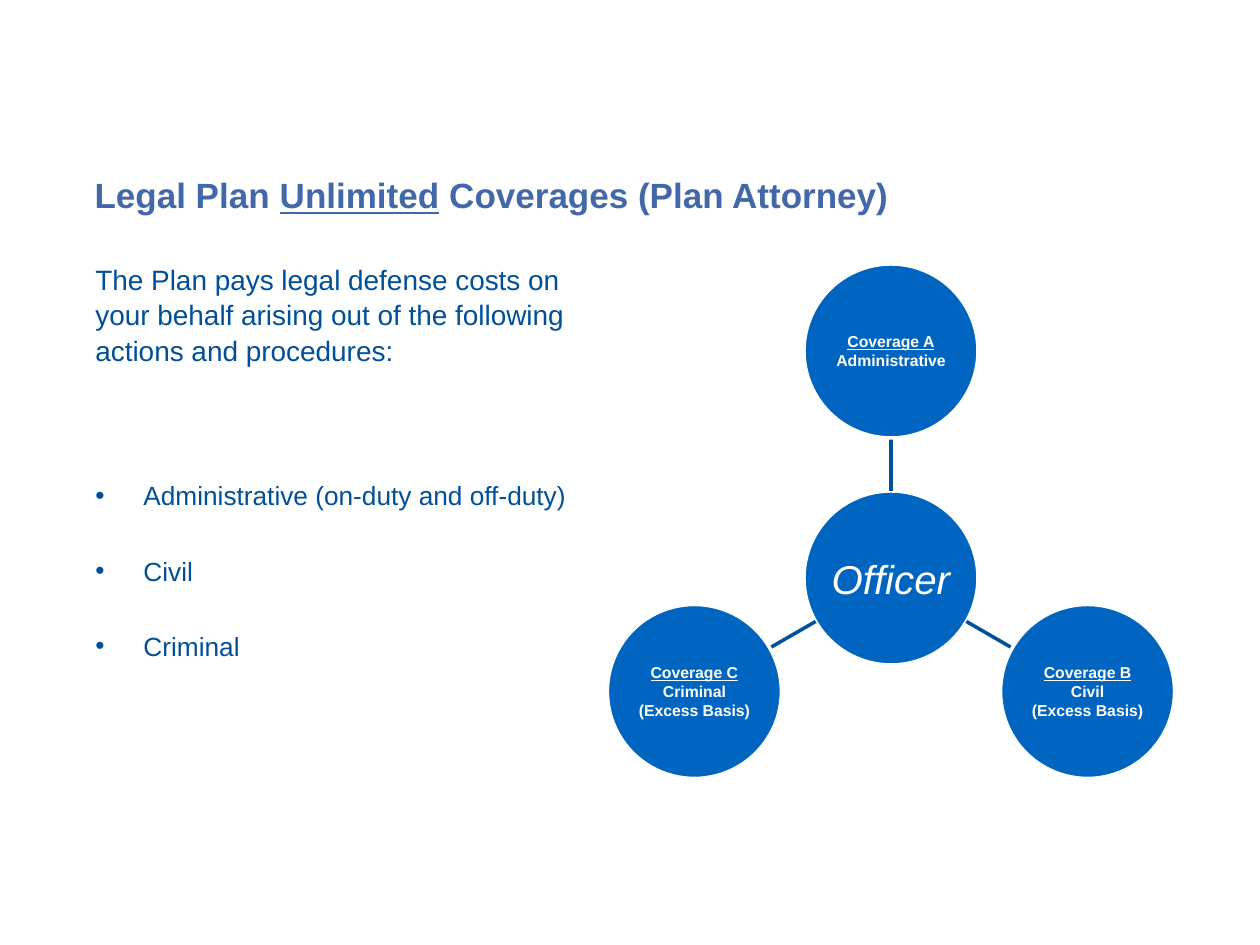
from dataclasses import dataclass
from math import cos, radians, sin

from lxml.etree import SubElement
from pptx import Presentation
from pptx.dml.color import RGBColor
from pptx.enum.shapes import MSO_CONNECTOR, MSO_SHAPE
from pptx.enum.text import MSO_ANCHOR, PP_ALIGN
from pptx.oxml.ns import qn
from pptx.util import Emu, Pt

PX_PER_INCH = 126


@dataclass(frozen=True)
class Theme:
    font: str = "Arial"
    title: RGBColor = RGBColor(0x43, 0x68, 0xAA)
    body: RGBColor = RGBColor(0x00, 0x4F, 0x99)
    circle: RGBColor = RGBColor(0x00, 0x65, 0xC0)
    spoke: RGBColor = RGBColor(0x00, 0x51, 0x9A)
    white: RGBColor = RGBColor(0xFF, 0xFF, 0xFF)
    title_size: int = 20
    intro_size: int = 16
    bullet_size: int = 15
    hub_size: int = 23
    coverage_size: int = 9
    line_width: int = 2
    line_spacing: float = 1.05


@dataclass(frozen=True)
class Coverage:
    angle: int  # degrees clockwise from the right
    lines: tuple[str, ...]


THEME = Theme()
HUB_X, HUB_Y = 891, 578
RADIUS, ORBIT = 87, 227
BULLET_INDENT = 48

BULLETS = ("Administrative (on-duty and off-duty)", "Civil", "Criminal")
COVERAGES = (
    Coverage(-90, ("Coverage A", "Administrative")),
    Coverage(30, ("Coverage B", "Civil", "(Excess Basis)")),
    Coverage(150, ("Coverage C", "Criminal", "(Excess Basis)")),
)


def px(n: float) -> Emu:
    return Emu(round(n * 914400 / PX_PER_INCH))


def format_runs(p, size: int, color: RGBColor, bold=False, italic=False) -> None:
    for r in p.runs:
        r.font.name = THEME.font
        r.font.size = Pt(size)
        r.font.color.rgb = color
        r.font.bold = bold
        r.font.italic = italic


def fill_lines(tf, lines: tuple[str, ...]) -> list:
    tf.text = "\n".join(lines)
    return list(tf.paragraphs)


def add_bullet(p) -> None:
    pPr = p._p.get_or_add_pPr()
    pPr.set("marL", str(px(BULLET_INDENT)))
    pPr.set("indent", str(-px(BULLET_INDENT)))
    SubElement(pPr, qn("a:buFont"), typeface=THEME.font)
    SubElement(pPr, qn("a:buChar"), char="•")


def add_text(s, left: int, top: int, width: int, height: int, anchor):
    tf = s.shapes.add_textbox(px(left), px(top), px(width), px(height)).text_frame
    tf.word_wrap = True
    tf.vertical_anchor = anchor
    return tf


def add_circle(s, x: float, y: float, lines: tuple[str, ...], size: int,
               bold=False, italic=False):
    sp = s.shapes.add_shape(MSO_SHAPE.OVAL, px(x - RADIUS), px(y - RADIUS),
                            px(2 * RADIUS), px(2 * RADIUS))
    sp.shadow.inherit = False
    sp.fill.solid()
    sp.fill.fore_color.rgb = THEME.circle
    sp.line.color.rgb = THEME.white
    sp.line.width = Pt(THEME.line_width)
    tf = sp.text_frame
    tf.word_wrap = False
    tf.vertical_anchor = MSO_ANCHOR.MIDDLE
    tf.margin_left = tf.margin_right = tf.margin_top = tf.margin_bottom = px(1)
    for p in fill_lines(tf, lines):
        p.alignment = PP_ALIGN.CENTER
        format_runs(p, size, THEME.white, bold, italic)
    return sp


def add_coverage(s, coverage: Coverage) -> None:
    dx, dy = cos(radians(coverage.angle)), sin(radians(coverage.angle))
    start, end = RADIUS, ORBIT - RADIUS
    spoke = s.shapes.add_connector(
        MSO_CONNECTOR.STRAIGHT,
        px(HUB_X + start * dx), px(HUB_Y + start * dy),
        px(HUB_X + end * dx), px(HUB_Y + end * dy))
    spoke.line.color.rgb = THEME.spoke
    spoke.line.width = Pt(THEME.line_width)
    SubElement(spoke._element.spPr, qn("a:effectLst"))
    sp = add_circle(s, HUB_X + ORBIT * dx, HUB_Y + ORBIT * dy,
                    coverage.lines, THEME.coverage_size, bold=True)
    sp.text_frame.paragraphs[0].runs[0].font.underline = True


def add_title(s) -> None:
    title = s.shapes.title
    title.left, title.top, title.width, title.height = px(82), px(158), px(1140), px(74)
    tf = title.text_frame
    tf.vertical_anchor = MSO_ANCHOR.MIDDLE
    p = tf.paragraphs[0]
    p.alignment = PP_ALIGN.LEFT
    for text in ("Legal Plan ", "Unlimited", " Coverages (Plan Attorney)"):
        r = p.add_run()
        r.text = text
        r.font.underline = text == "Unlimited"
    format_runs(p, THEME.title_size, THEME.title, bold=True)


def main() -> None:
    prs = Presentation()
    prs.slide_width, prs.slide_height = px(1260), px(945)
    s = prs.slides.add_slide(prs.slide_layouts[5])
    add_title(s)

    # Introduction
    p = add_text(s, 83, 241, 557, 132, MSO_ANCHOR.BOTTOM).paragraphs[0]
    p.text = ("The Plan pays legal defense costs on\v"
              "your behalf arising out of the following actions and procedures:")
    p.line_spacing = THEME.line_spacing
    format_runs(p, THEME.intro_size, THEME.body)

    # Bulleted list
    tf = add_text(s, 83, 472, 522, 332, MSO_ANCHOR.TOP)
    for i, p in enumerate(fill_lines(tf, BULLETS)):
        add_bullet(p)
        p.line_spacing = THEME.line_spacing
        p.space_before = Pt(24 if i else 0)
        format_runs(p, THEME.bullet_size, THEME.body)

    # Radial diagram
    add_circle(s, HUB_X, HUB_Y, ("Officer",), THEME.hub_size, italic=True)
    for coverage in COVERAGES:
        add_coverage(s, coverage)

    prs.save("out.pptx")


if __name__ == "__main__":
    main()
